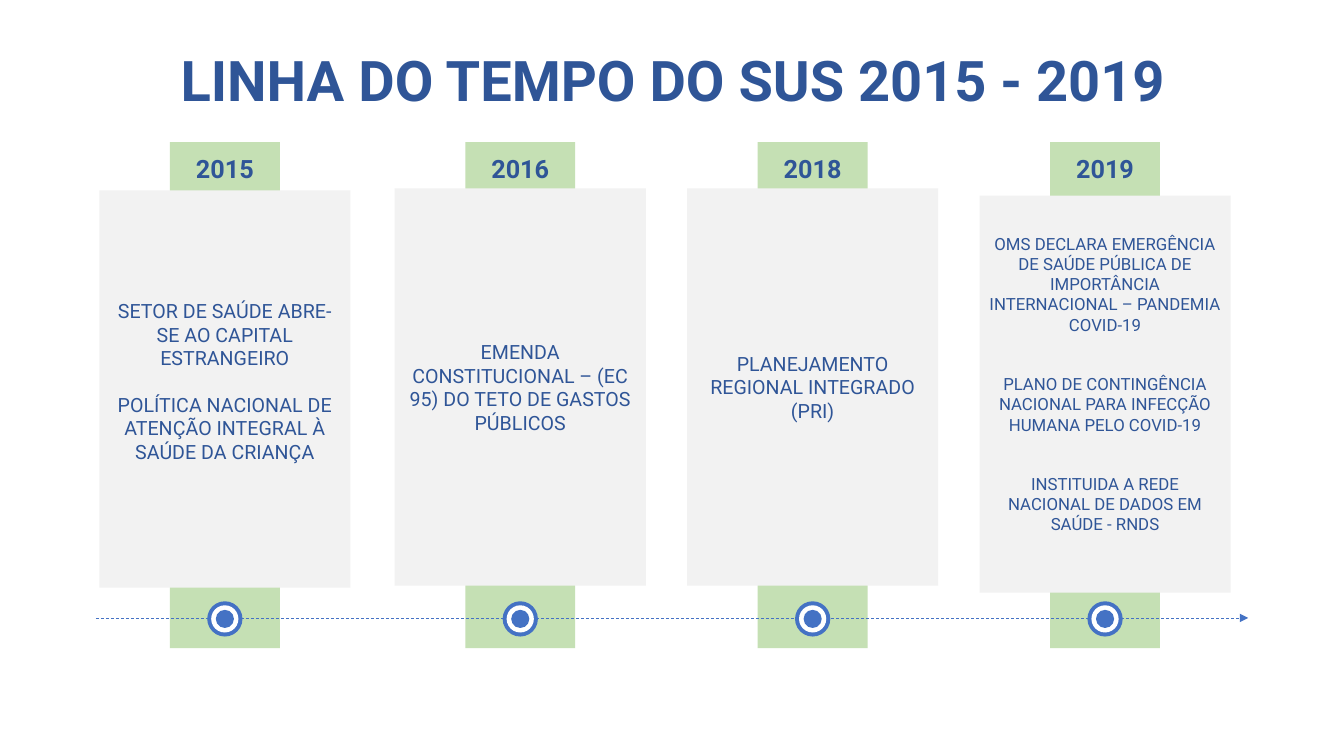
from pptx import Presentation
from pptx.dml.color import RGBColor
from pptx.enum.dml import MSO_LINE
from pptx.enum.shapes import MSO_CONNECTOR, MSO_SHAPE
from pptx.enum.text import MSO_ANCHOR, PP_ALIGN
from pptx.oxml.ns import qn
from pptx.util import Inches, Pt
from lxml import etree

COLORS = {"ink": "2F5597", "green": "C5E0B4", "card": "F2F2F2",
          "blue": "4472C4", "white": "FFFFFF"}
FONT = "Roboto"

# Column box, with the band and card sizes inside it
TOP, WIDTH, HEIGHT = 1.41, 2.49, 5.02
BAND, TALL = 1.09, 3.94

# Year, column centre, card top, text size, paragraph gap, bottom inset, texts
STEPS = [
    ("2015", 2.23, 1.89, 14, 16.4, 0.21,
     ["SETOR DE SAÚDE ABRE-SE AO CAPITAL ESTRANGEIRO",
      "POLÍTICA NACIONAL DE ATENÇÃO INTEGRAL À SAÚDE DA CRIANÇA"]),
    ("2016", 5.16, 1.87, 14, 0, 0.05,
     ["EMENDA CONSTITUCIONAL – (EC 95) DO TETO DE GASTOS PÚBLICOS"]),
    ("2018", 8.06, 1.87, 14, 0, 0.05,
     ["PLANEJAMENTO REGIONAL INTEGRADO (PRI)"]),
    ("2019", 10.96, 1.94, 12, 28.2, 0.25,
     ["OMS DECLARA EMERGÊNCIA DE SAÚDE PÚBLICA DE IMPORTÂNCIA "
      "INTERNACIONAL – PANDEMIA COVID-19",
      "PLANO DE CONTINGÊNCIA NACIONAL PARA INFECÇÃO HUMANA PELO COVID-19",
      "INSTITUIDA A REDE NACIONAL DE DADOS EM SAÚDE - RNDS"]),
]


def color(name):
    return RGBColor.from_string(COLORS[name])


def draw(shapes, kind, box, fill):
    shape = shapes.add_shape(kind, *map(Inches, box))
    shape.shadow.inherit = False
    shape.fill.solid()
    shape.fill.fore_color.rgb = color(fill)
    shape.line.fill.background()
    return shape


def write(frame, texts, size, bold=False, gap=0, lead=None):
    frame.word_wrap = True
    for i, text in enumerate(texts):
        par = frame.add_paragraph() if i else frame.paragraphs[0]
        par.alignment = PP_ALIGN.CENTER
        par.line_spacing = lead
        if i and gap:
            par.space_before = Pt(gap)
        run = par.add_run()
        run.text = text
        run.font.name = FONT
        run.font.size = Pt(size)
        run.font.bold = bold
        run.font.color.rgb = color("ink")


def label(slide, box, text, size, anchor, lead=None):
    frame = slide.shapes.add_textbox(*map(Inches, box)).text_frame
    frame.vertical_anchor = anchor
    write(frame, [text], size, bold=True, lead=lead)


def column(slide, step):
    year, mid, top, size, gap, inset, texts = step
    left = mid - BAND / 2
    # Green band
    draw(slide.shapes, MSO_SHAPE.RECTANGLE, (left, TOP, BAND, HEIGHT), "green")
    # Text card
    card = draw(slide.shapes, MSO_SHAPE.RECTANGLE,
                (mid - WIDTH / 2, top, WIDTH, TALL), "card")
    frame = card.text_frame
    frame.vertical_anchor = MSO_ANCHOR.MIDDLE
    frame.margin_bottom = Inches(inset)
    write(frame, texts, size, gap=gap)
    # Year
    label(slide, (left, TOP + 0.06, BAND, 0.4), year, 18, MSO_ANCHOR.TOP)


def axis(slide, left, right, y):
    line = slide.shapes.add_connector(
        MSO_CONNECTOR.STRAIGHT, *map(Inches, (left, y, right, y)))
    line.line.color.rgb = color("blue")
    line.line.width = Pt(0.5)
    line.line.dash_style = MSO_LINE.DASH
    etree.SubElement(line.line._get_or_add_ln(), qn("a:tailEnd"), type="triangle")
    etree.SubElement(line._element.spPr, qn("a:effectLst"))


def marker(slide, x, y):
    group = slide.shapes.add_group_shape()
    for size, fill in ((0.35, "blue"), (0.27, "white"), (0.18, "blue")):
        draw(group.shapes, MSO_SHAPE.OVAL,
             (x - size / 2, y - size / 2, size, size), fill)


def timeline(slide):
    for step in STEPS:
        column(slide, step)
    axis(slide, 0.95, 12.38, 6.13)
    for step in STEPS:
        marker(slide, step[1], 6.14)


def main():
    deck = Presentation()
    deck.slide_width, deck.slide_height = Inches(13.33), Inches(7.5)
    slide = deck.slides.add_slide(deck.slide_layouts[6])
    # Title
    label(slide, (0.92, 0.4, 11.5, 0.86), "LINHA DO TEMPO DO SUS 2015 - 2019",
          40, MSO_ANCHOR.MIDDLE, lead=0.9)
    timeline(slide)
    deck.save("out.pptx")


if __name__ == "__main__":
    main()
